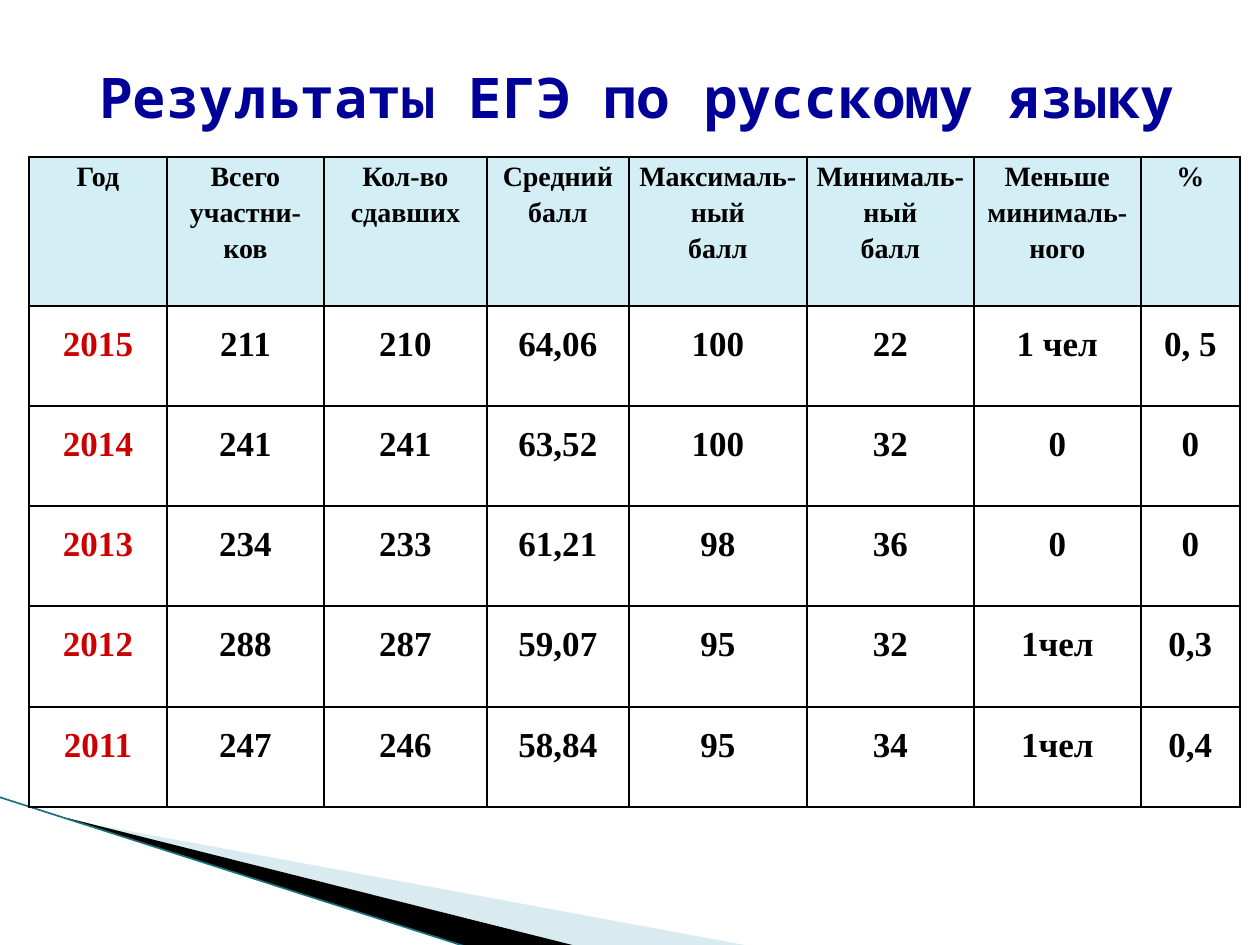
from dataclasses import dataclass
from typing import Optional

from lxml import etree
from pptx import Presentation
from pptx.dml.color import RGBColor
from pptx.enum import shapes, text
from pptx.oxml import ns
from pptx.util import Emu, Pt

EMU_PER_PX = 914400 / 126

NAVY = RGBColor(0x00, 0x00, 0x99)
BLACK = RGBColor(0x00, 0x00, 0x00)
RED = RGBColor(0xCC, 0x00, 0x00)
PALE_CYAN = RGBColor(0xD3, 0xEE, 0xF5)
SKY = RGBColor(0xA0, 0xCB, 0xDC)
TEAL = RGBColor(0x1B, 0x70, 0x80)

COLUMN_WIDTHS = (138, 157, 163, 142, 178, 167, 167, 99)
ROW_HEIGHTS = (149, 100, 100, 100, 101, 100)
HEADERS = (
    "Год", "Всего\nучастни-\nков", "Кол-во\nсдавших", "Средний балл",
    "Максималь-\nный\nбалл", "Минималь-\nный\nбалл",
    "Меньше минималь-\nного", "%",
)
RESULTS = (
    ("2015", "211", "210", "64,06", "100", "22", "1 чел", "0, 5"),
    ("2014", "241", "241", "63,52", "100", "32", "0", "0"),
    ("2013", "234", "233", "61,21", "98", "36", "0", "0"),
    ("2012", "288", "287", "59,07", "95", "32", "1чел", "0,3"),
    ("2011", "247", "246", "58,84", "95", "34", "1чел", "0,4"),
)


@dataclass(frozen=True)
class Wedge:
    """A filled outline whose points may lie outside its frame."""
    left: int
    top: int
    width: int
    height: int
    points: tuple
    color: RGBColor
    opacity: int = 100


WEDGES = (
    Wedge(98, 689, 524, 199,
          ((69, 820), (750, 946), (575, 946), (69, 819)), SKY, 40),
    Wedge(-8, 798, 524, 116,
          ((67, 818), (576, 946), (469, 948), (68, 819)), BLACK),
)


def px(length: int) -> Emu:
    return Emu(round(length * EMU_PER_PX))


def write(frame, content: str, *, font: str, size: int, color: RGBColor,
          spacing: float) -> None:
    """Fill a text frame with centred bold paragraphs, one per line."""
    for index, line in enumerate(content.split("\n")):
        para = frame.paragraphs[0] if index == 0 else frame.add_paragraph()
        para.alignment = text.PP_ALIGN.CENTER
        para.line_spacing = spacing
        span = para.add_run()
        span.text = line
        span.font.name = font
        span.font.size = Pt(size)
        span.font.bold = True
        span.font.color.rgb = color


def set_frame(shape, wedge: Wedge) -> None:
    """Give the outline its own frame while its points stay in place."""
    shape.left, shape.top = px(wedge.left), px(wedge.top)
    shape.width, shape.height = px(wedge.width), px(wedge.height)
    outline = shape._element.spPr.find(".//" + ns.qn("a:path"))
    outline.set("w", str(wedge.width))
    outline.set("h", str(wedge.height))
    for point, (x, y) in zip(outline.iter(ns.qn("a:pt")), wedge.points):
        point.set("x", str(x - wedge.left))
        point.set("y", str(y - wedge.top))


def draw_wedge(page, wedge: Wedge) -> None:
    start, *rest = wedge.points
    builder = page.shapes.build_freeform(*start, scale=EMU_PER_PX)
    builder.add_line_segments(rest, close=True)
    shape = builder.convert_to_shape()
    set_frame(shape, wedge)
    shape.shadow.inherit = False
    shape.line.fill.background()
    shape.fill.solid()
    shape.fill.fore_color.rgb = wedge.color
    if wedge.opacity < 100:
        color = shape.fill._xPr.find(".//" + ns.qn("a:srgbClr"))
        alpha = etree.SubElement(color, ns.qn("a:alpha"))
        alpha.set("val", str(wedge.opacity * 1000))


def draw_edge_line(page) -> None:
    line = page.shapes.add_connector(
        shapes.MSO_CONNECTOR.STRAIGHT, px(-1), px(797), px(467), px(947))
    line.line.color.rgb = TEAL
    line.line.width = Pt(0.95)
    etree.SubElement(line._element.spPr, ns.qn("a:effectLst"))


def draw_title(page) -> None:
    box = page.shapes.add_textbox(px(39), px(69), px(1182), px(78))
    frame = box.text_frame
    frame.word_wrap = True
    write(frame, "Результаты ЕГЭ по русскому языку", font="Noto Sans Mono",
          size=32, color=NAVY, spacing=0.8)
    indents = frame.paragraphs[0]._p.get_or_add_pPr()
    indents.set("marL", str(px(50)))
    indents.set("indent", str(px(-35)))


def add_borders(cell) -> None:
    properties = cell._tc.get_or_add_tcPr()
    for side in ("lnL", "lnR", "lnT", "lnB"):
        border = etree.SubElement(properties, ns.qn(f"a:{side}"), w=str(Pt(1)))
        fill = etree.SubElement(border, ns.qn("a:solidFill"))
        etree.SubElement(fill, ns.qn("a:srgbClr"), val=str(BLACK))


def fill_cell(cell, content: str, *, size: int, color: RGBColor,
              spacing: float, background: Optional[RGBColor] = None) -> None:
    cell.margin_left = cell.margin_right = px(8)
    cell.margin_top = cell.margin_bottom = 0
    add_borders(cell)
    if background is None:
        cell.fill.background()
    else:
        cell.fill.solid()
        cell.fill.fore_color.rgb = background
    write(cell.text_frame, content, font="Times New Roman", size=size,
          color=color, spacing=spacing)


def draw_results(page) -> None:
    table = page.shapes.add_table(
        len(ROW_HEIGHTS), len(HEADERS), px(29), px(157),
        px(sum(COLUMN_WIDTHS)), px(sum(ROW_HEIGHTS))).table
    table.first_row = table.horz_banding = False
    for column, width in zip(table.columns, COLUMN_WIDTHS):
        column.width = px(width)
    for row, height in zip(table.rows, ROW_HEIGHTS):
        row.height = px(height)
    for column, header in enumerate(HEADERS):
        fill_cell(table.cell(0, column), header, size=16, color=BLACK,
                  spacing=1.15, background=PALE_CYAN)
    for row, values in enumerate(RESULTS, start=1):
        for column, value in enumerate(values):
            fill_cell(table.cell(row, column), value, size=20,
                      color=RED if column == 0 else BLACK, spacing=1.5)


def main() -> None:
    deck = Presentation()
    deck.slide_width, deck.slide_height = px(1260), px(945)
    page = deck.slides.add_slide(deck.slide_layouts[6])
    for wedge in WEDGES:
        draw_wedge(page, wedge)
    draw_edge_line(page)
    draw_title(page)
    draw_results(page)
    deck.save("out.pptx")


if __name__ == "__main__":
    main()
